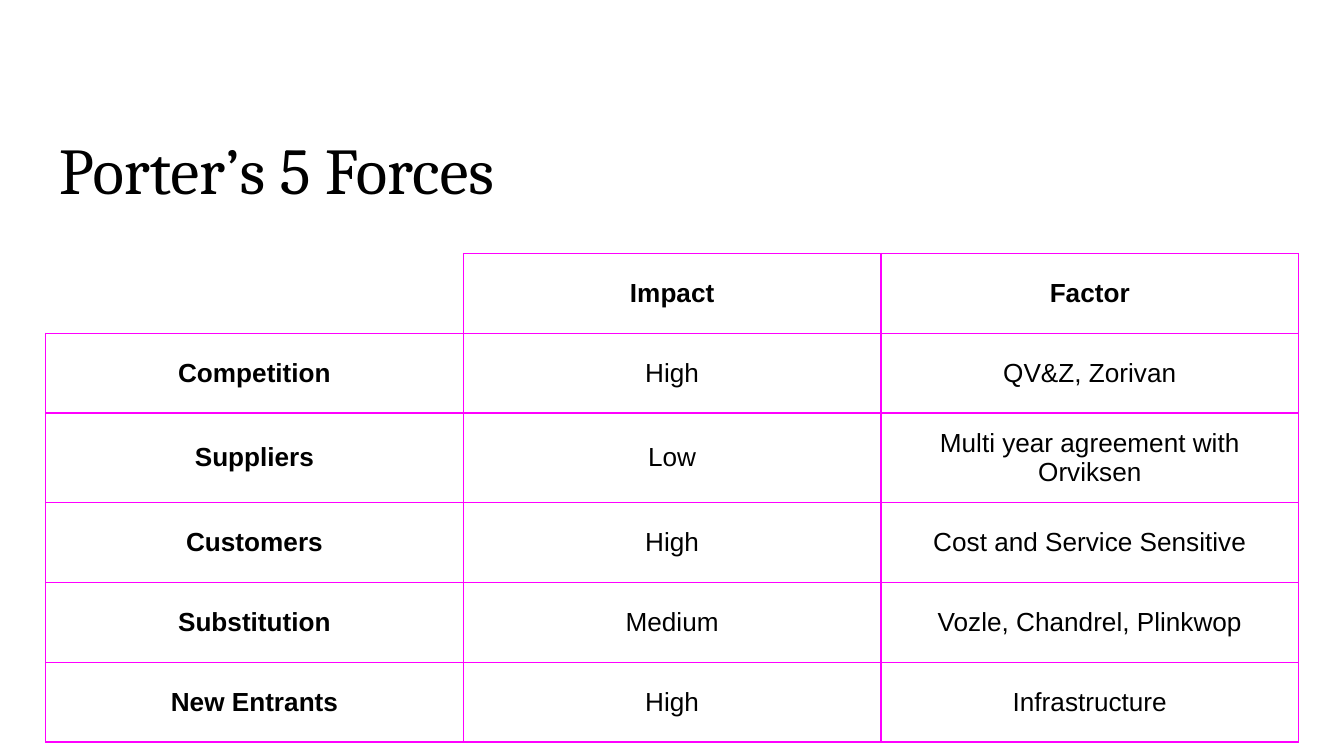
from lxml import etree
from pptx import Presentation
from pptx.dml.color import RGBColor
from pptx.enum.text import MSO_ANCHOR, PP_ALIGN
from pptx.oxml.ns import qn
from pptx.util import Pt

CENTER = PP_ALIGN.CENTER
LEFT = PP_ALIGN.LEFT
MIDDLE = MSO_ANCHOR.MIDDLE
TOP = MSO_ANCHOR.TOP

COLORS = {"ink": "000000", "paper": "FFFFFF", "grid": "FF00FF"}
INSET = 7.2
ROW_HEIGHT = 42.75
TALL_ROW_HEIGHT = 46
TALL_ROW = 2

FORCES = [
    ("", "Impact", "Factor"),
    ("Competition", "High", "QV&Z, Zorivan"),
    ("Suppliers", "Low", "Multi year agreement with Orviksen"),
    ("Customers", "High", "Cost and Service Sensitive"),
    ("Substitution", "Medium", "Vozle, Chandrel, Plinkwop"),
    ("New Entrants", "High", "Infrastructure"),
]


def set_insets(holder):
    holder.margin_left = holder.margin_right = Pt(INSET)
    holder.margin_top = holder.margin_bottom = Pt(INSET)


def add_run(paragraph, text, font, size, align, bold=False):
    paragraph.alignment = align
    paragraph.line_spacing = 1.0
    run = paragraph.add_run()
    run.text = text
    run.font.name = font
    run.font.size = Pt(size)
    run.font.bold = bold
    run.font.color.rgb = RGBColor.from_string(COLORS["ink"])


def set_borders(cell, colors):
    """Draw the left, right, top and bottom borders, in that order."""
    properties = cell._tc.get_or_add_tcPr()
    for position, (side, color) in enumerate(zip("LRTB", colors)):
        line = etree.Element(qn(f"a:ln{side}"), w=str(Pt(0.75)))
        fill = etree.SubElement(line, qn("a:solidFill"))
        etree.SubElement(fill, qn("a:srgbClr"), val=COLORS[color])
        properties.insert(position, line)


def add_title(slide, left, top, width, height):
    frame = slide.shapes.add_textbox(Pt(left), Pt(top), Pt(width), Pt(height)).text_frame
    frame.word_wrap = True
    frame.vertical_anchor = TOP
    set_insets(frame)
    add_run(frame.paragraphs[0], "Porter’s 5 Forces", "Cambria", 35, LEFT)


def add_forces_table(slide, left, top, width, height):
    table = slide.shapes.add_table(
        len(FORCES), len(FORCES[0]), Pt(left), Pt(top), Pt(width), Pt(height)
    ).table
    table.first_row = table.horz_banding = False
    for column in table.columns:
        column.width = Pt(width / len(FORCES[0]))

    for r, force in enumerate(FORCES):
        table.rows[r].height = Pt(TALL_ROW_HEIGHT if r == TALL_ROW else ROW_HEIGHT)
        for c, text in enumerate(force):
            cell = table.cell(r, c)
            cell.vertical_anchor = MIDDLE
            set_insets(cell)
            cell.fill.background()
            # The empty corner hides its outer borders
            outer = "grid" if text else "paper"
            set_borders(cell, (outer, "grid", outer, "grid"))
            if text:
                heading = r == 0 or c == 0
                add_run(cell.text_frame.paragraphs[0], text, "Arial", 14, CENTER, heading)


def main():
    presentation = Presentation()
    presentation.slide_width = Pt(720)
    presentation.slide_height = Pt(405)
    slide = presentation.slides.add_slide(presentation.slide_layouts[6])
    slide.background.fill.solid()
    slide.background.fill.fore_color.rgb = RGBColor.from_string(COLORS["paper"])

    add_title(slide, 24.5, 62, 671, 45)
    table_height = ROW_HEIGHT * (len(FORCES) - 1) + TALL_ROW_HEIGHT
    add_forces_table(slide, 24.5, 135.75, 671.25, table_height)
    presentation.save("out.pptx")


if __name__ == "__main__":
    main()
